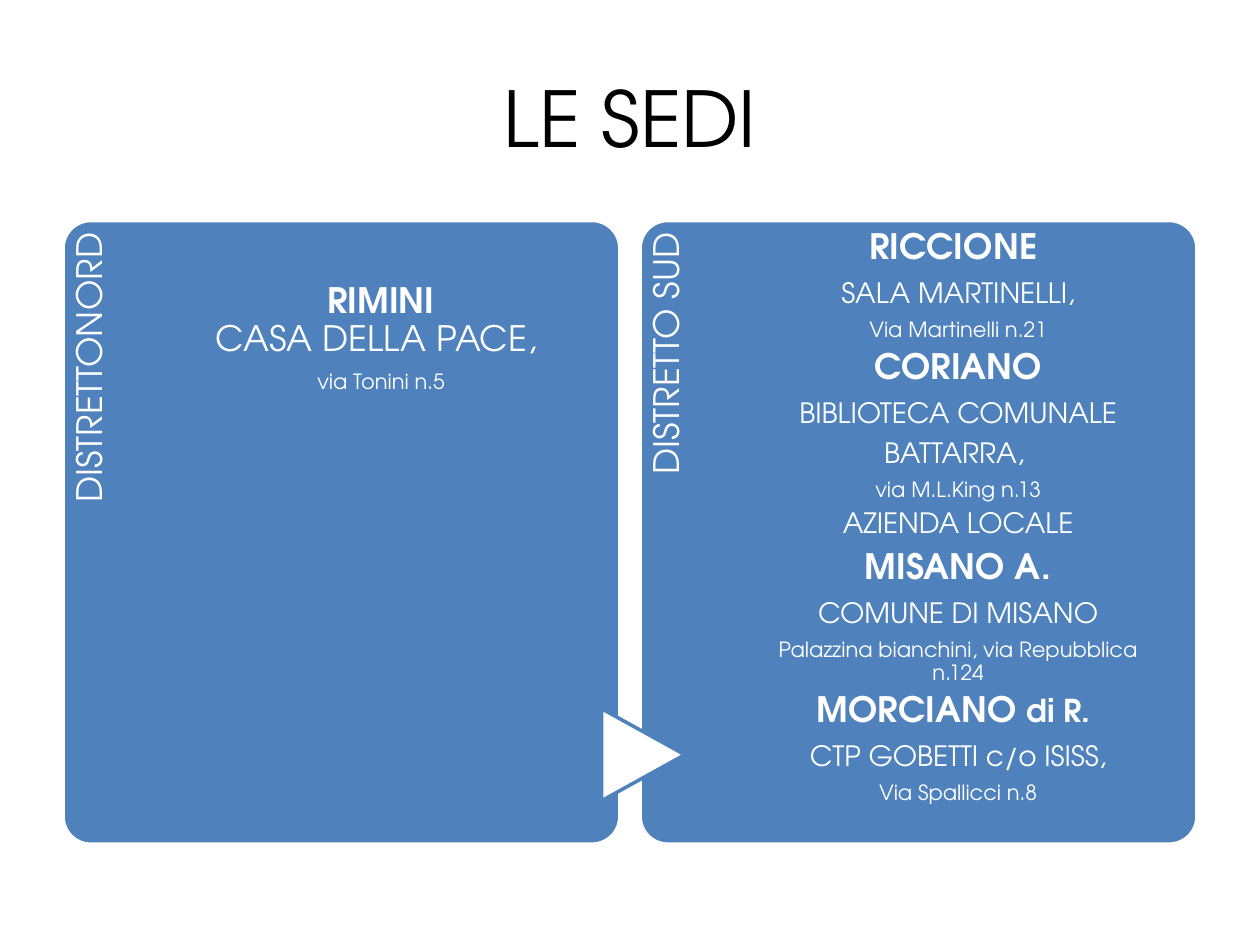
from dataclasses import dataclass

from lxml.etree import SubElement
from pptx import Presentation
from pptx.dml.color import RGBColor
from pptx.enum.shapes import MSO_SHAPE
from pptx.enum.text import MSO_ANCHOR, PP_ALIGN
from pptx.oxml.ns import qn
from pptx.util import Inches, Pt


@dataclass(frozen=True)
class Theme:
    font: str = "TeX Gyre Adventor"
    blue: RGBColor = RGBColor(0x4F, 0x81, 0xBD)
    white: RGBColor = RGBColor(0xFF, 0xFF, 0xFF)
    black: RGBColor = RGBColor(0, 0, 0)
    title: tuple = (44, False)
    label: tuple = (20, False)
    town: tuple = (20, True)
    suffix: tuple = (18, True)
    main_venue: tuple = (20, False)
    venue: tuple = (16, False)
    street: tuple = (12, False)
    outline: int = 2
    line_spacing: float = 0.9
    space_after: int = 35000  # thousandths of a percent


class SlideBuilder:
    def __init__(self, slide, theme):
        self.shapes = slide.shapes
        self.theme = theme

    def shape(self, kind, left, top, width, height, fill, line):
        shape = self.shapes.add_shape(
            kind, Inches(left), Inches(top), Inches(width), Inches(height))
        shape.shadow.inherit = False
        shape.fill.solid()
        shape.fill.fore_color.rgb = fill
        shape.line.color.rgb = line
        shape.line.width = Pt(self.theme.outline)
        return shape

    def text(self, left, top, width, height, paragraphs, color,
             align=PP_ALIGN.CENTER, anchor=MSO_ANCHOR.TOP,
             margin_top=0.07, margin_right=0.0):
        """Each paragraph is a list of (text, style) spans; None breaks the line."""
        box = self.shapes.add_textbox(
            Inches(left), Inches(top), Inches(width), Inches(height))
        frame = box.text_frame
        frame.word_wrap = True
        frame.vertical_anchor = anchor
        frame.margin_left = frame.margin_bottom = 0
        frame.margin_top = Inches(margin_top)
        frame.margin_right = Inches(margin_right)
        for index, spans in enumerate(paragraphs):
            para = frame.add_paragraph() if index else frame.paragraphs[0]
            para.alignment = align
            for span in spans:
                if span is None:
                    para.add_line_break()
                else:
                    self.span(para, *span, color)
        return box

    def span(self, para, text, style, color):
        run = para.add_run()
        run.text = text
        run.font.name = self.theme.font
        run.font.size, run.font.bold = Pt(style[0]), style[1]
        run.font.color.rgb = color

    def tighten(self, box):
        for para in box.text_frame.paragraphs:
            para.line_spacing = self.theme.line_spacing
            after = SubElement(para._p.get_or_add_pPr(), qn("a:spcAft"))
            SubElement(after, qn("a:spcPct"), val=str(self.theme.space_after))

    def panel(self, left, label, venues, margin_top):
        theme = self.theme
        top, width, height = 1.75, 4.42, 4.95
        card = self.shape(MSO_SHAPE.ROUNDED_RECTANGLE, left, top, width, height,
                          theme.blue, theme.white)
        card.adjustments[0] = 0.05

        # Label reading upwards along the left side
        length, depth = 4.06, 0.88
        side = self.text(left + (depth - length) / 2, top + (length - depth) / 2,
                         length, depth, [[(label, theme.label)]], theme.white,
                         align=PP_ALIGN.RIGHT, margin_right=0.1)
        side.rotation = 270
        self.tighten(side)

        body = self.text(left + depth, top, 3.29, height, venues, theme.white,
                         margin_top=margin_top)
        self.tighten(body)


def main():
    theme = Theme()
    deck = Presentation()
    deck.slide_width, deck.slide_height = Inches(10), Inches(7.5)
    builder = SlideBuilder(deck.slides.add_slide(deck.slide_layouts[6]), theme)

    # Title
    builder.text(0.5, 0.3, 9, 1.25, [[("LE SEDI", theme.title)]], theme.black,
                 anchor=MSO_ANCHOR.MIDDLE, margin_top=0)

    # District panels
    north = [
        [("RIMINI", theme.town), None, ("CASA DELLA PACE, ", theme.main_venue)],
        [("via Tonini n.5", theme.street)],
    ]
    south = [
        [("RICCIONE ", theme.town)],
        [("SALA MARTINELLI,", theme.venue)],
        [("Via Martinelli n.21", theme.street)],
        [("CORIANO", theme.town)],
        [("BIBLIOTECA COMUNALE", theme.venue)],
        [("BATTARRA, ", theme.venue)],
        [("via M.L.King n.13", theme.street)],
        [("AZIENDA LOCALE", theme.venue)],
        [("MISANO A.", theme.town)],
        [("COMUNE DI MISANO", theme.venue)],
        [("Palazzina bianchini, via Repubblica n.124", theme.street)],
        [("MORCIANO ", theme.town), ("di R. ", theme.suffix)],
        [("CTP GOBETTI c/o ISISS,", theme.venue)],
        [("Via Spallicci n.8", theme.street)],
    ]
    builder.panel(0.5, "DISTRETTONORD", north, margin_top=0.5)
    builder.panel(5.08, "DISTRETTO SUD", south, margin_top=0.07)

    # Arrow from north to south
    arrow = builder.shape(MSO_SHAPE.FLOWCHART_EXTRACT, 4.74, 5.66, 0.73, 0.66,
                          theme.white, theme.blue)
    arrow.rotation = 90

    deck.save("out.pptx")


if __name__ == "__main__":
    main()
